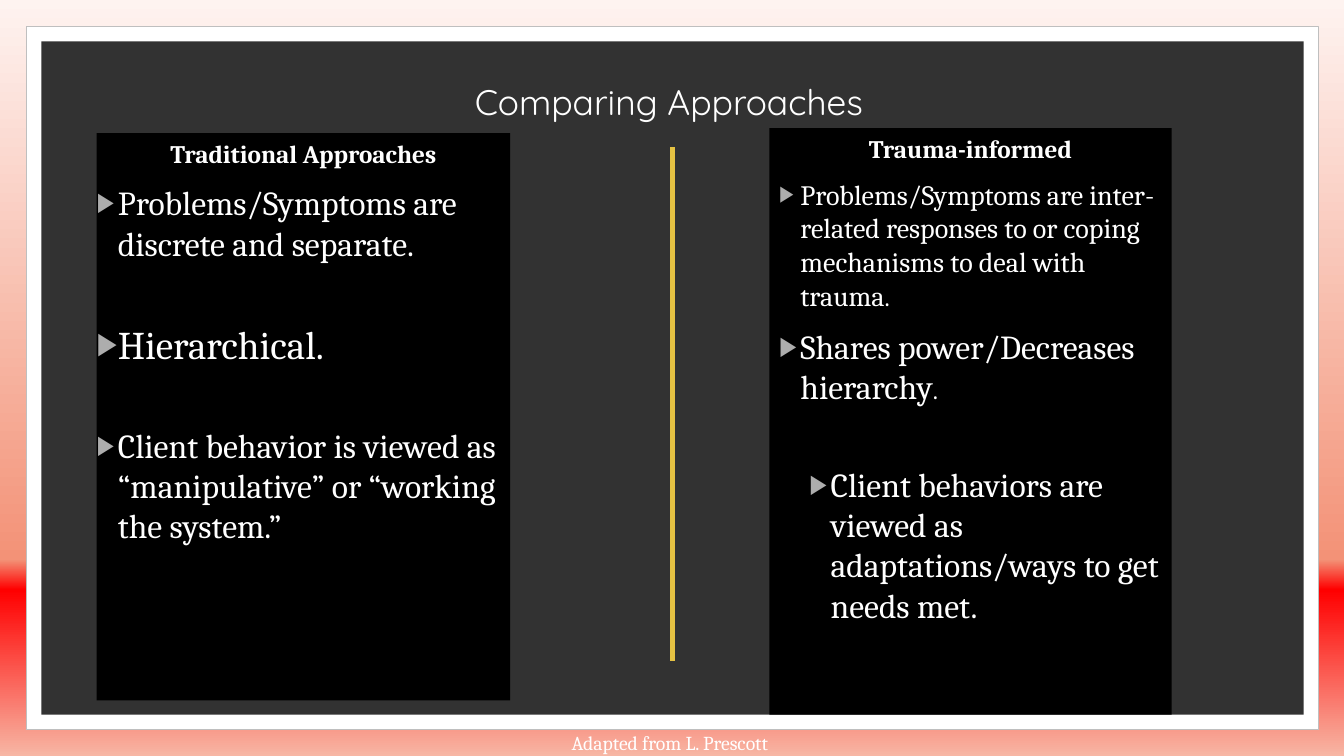
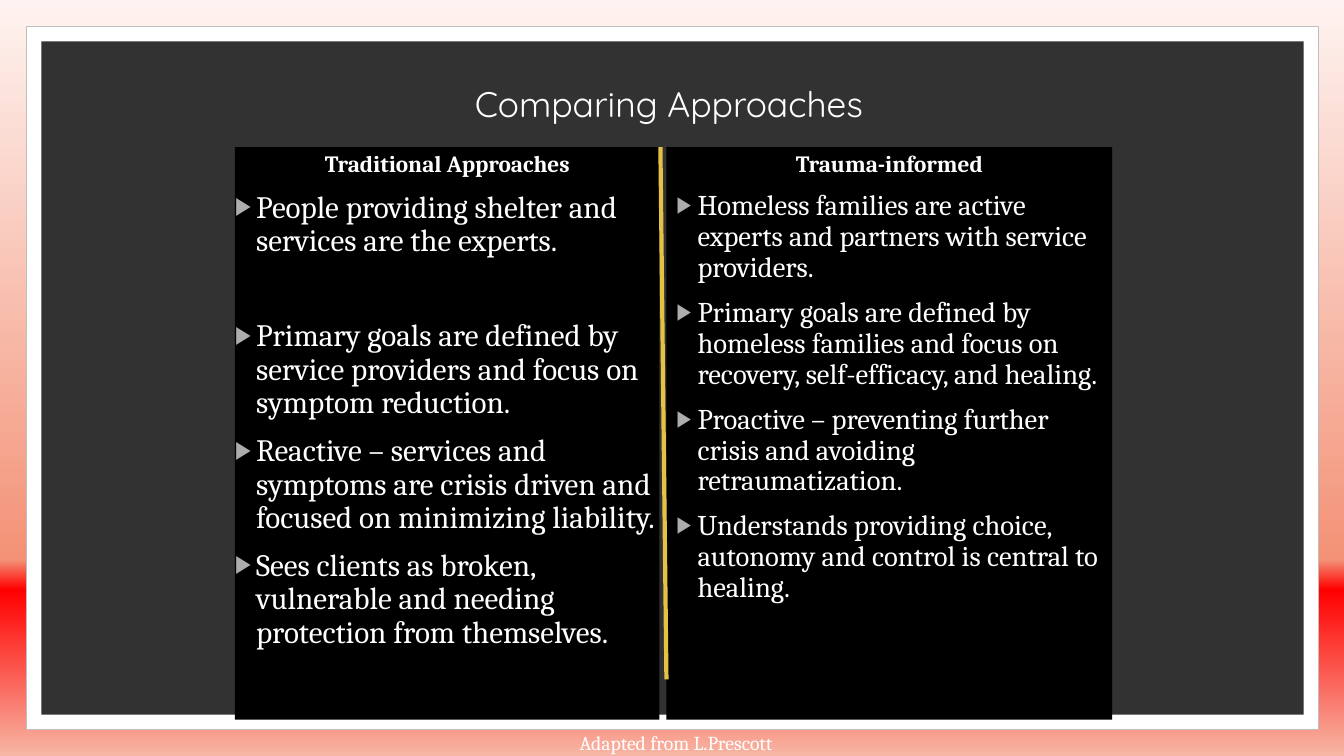
import copy
import pptx
import pptx.util
import pptx.dml.color
import pptx.enum.shapes
import pptx.enum.text
import pptx.oxml
import pptx.oxml.ns

Inches, Pt = pptx.util.Inches, pptx.util.Pt
ALIGN = pptx.enum.text.PP_ALIGN
qn = pptx.oxml.ns.qn

# Shared style
BODY, HEAD = "Cambria", "Quicksand"
WHITE, BLACK, SLATE, EDGE = "FFFFFF", "000000", "323232", "BFBFBF"
GOLD, GREY = "E5C243", "ADADAD"
SKY = [(0, "FEF3F0"), (0.74, "F39277"), (0.78, "FF0000"), (1, "F7B6A4")]
FRAMES = [((0.26, 0.26, 12.82, 6.98), WHITE, EDGE),
          ((0.41, 0.41, 12.52, 6.68), SLATE, None)]
HANG, GAP = 0.21, 10

# Content: each point is (runs of (text, size), space before, left indent)
SLIDES = [
    {"title": "Comparing Approaches", "tall": 0.43, "lead": 1.0, "size": 18,
     "panels": [
         {"at": (7.63, 1.27, 3.99, 5.82), "side": 0.1, "head": "Trauma-informed",
          "points": [
              ([("Problems/Symptoms are inter-related responses to or coping "
                 "mechanisms to deal with trauma", 20), (".", 18)], GAP, HANG),
              ([("Shares power/Decreases hierarchy", 24), (".", 18)], GAP, HANG),
              ([("Client behaviors are viewed as adaptations/ways to get "
                 "needs met.", 24)], 41, 0.51)]},
         {"at": (0.96, 1.32, 4.1, 5.63), "side": 0, "head": "Traditional Approaches",
          "points": [
              ([("Problems/Symptoms are discrete and separate.", 24)], GAP, HANG),
              ([("Hierarchical.", 28)], 41, HANG),
              ([("Client behavior is viewed as “manipulative” or “working "
                 "the system.”", 24)], 41, HANG)]}],
     "credit": ("Adapted from L. Prescott", 5.57),
     "rule": (6.67, 1.46, 6.67, 6.56)},
    {"title": "Comparing Approaches", "tall": 0.47, "lead": 0.9, "size": 16.6,
     "panels": [
         {"at": (6.61, 1.46, 4.42, 5.68), "side": 0.1, "head": "Trauma-informed",
          "points": [([(text, 20.4)], GAP, HANG) for text in (
              "Homeless families are active experts and partners with service "
              "providers.",
              "Primary goals are defined by homeless families and focus on "
              "recovery, self-efficacy, and healing.",
              "Proactive – preventing further crisis and avoiding "
              "retraumatization.",
              "Understands providing choice, autonomy and control is central "
              "to healing.")]},
         {"at": (2.33, 1.46, 4.21, 5.68), "side": 0, "head": "Traditional Approaches",
          "points": [([(text, 22.2)], gap, HANG) for text, gap in (
              ("People providing shelter and services are the experts.", GAP),
              ("Primary goals are defined by service providers and focus on "
               "symptom reduction.", 44),
              ("Reactive – services and symptoms are crisis driven and focused "
               "on minimizing liability.", GAP),
              ("Sees clients as broken, vulnerable and needing protection from "
               "themselves.", GAP))]}],
     "credit": ("Adapted from L.Prescott", 5.65),
     "rule": (6.55, 1.46, 6.61, 6.74)},
]


def rgb(code):
    return pptx.dml.color.RGBColor.from_string(code)


def place(box):
    return [Inches(v) for v in box]


def paint(fill, code):
    fill.solid()
    fill.fore_color.rgb = rgb(code)


def add_run(para, text, size, font=BODY, bold=False):
    run = para.add_run()
    run.text = text
    run.font.size, run.font.name, run.font.bold = Pt(size), font, bold
    run.font.color.rgb = rgb(WHITE)


def add_bullet(para, left):
    props = para._p.get_or_add_pPr()
    props.set("marL", str(Inches(left)))
    props.set("indent", str(-Inches(HANG)))
    color = pptx.oxml.ns.nsdecls("a")
    for xml in (f'<a:buClr {color}><a:srgbClr val="{GREY}"/></a:buClr>',
                f'<a:buSzPct {color} val="80000"/>',
                f'<a:buFont {color} typeface="Arial"/>',
                f'<a:buChar {color} char="▶"/>'):
        props.append(pptx.oxml.parse_xml(xml))


def set_back(layout):
    fill = layout.background.fill
    fill.gradient()
    fill.gradient_angle = 270
    stops = next(layout.element.iter(qn("a:gsLst")))
    while len(stops) < len(SKY):
        stops.append(copy.deepcopy(stops[0]))
    for stop, (pos, code) in zip(fill.gradient_stops, SKY):
        stop.position = pos
        stop.color.rgb = rgb(code)


def add_frames(slide, layout):
    """Draw the frames, then hand them to the layout all slides share."""
    for spot, (box, color, edge) in enumerate(FRAMES, 2):
        frame = slide.shapes.add_shape(
            pptx.enum.shapes.MSO_SHAPE.RECTANGLE, *place(box))
        frame.shadow.inherit = False
        paint(frame.fill, color)
        if edge:
            frame.line.color.rgb = rgb(edge)
            frame.line.width = Pt(0.5)
        else:
            frame.line.fill.background()
        layout.shapes.element.insert(spot, frame.element)


def add_title(slide, text, tall):
    title = slide.shapes.title
    title.left, title.top, title.width, title.height = place((2.27, 0.82, 8.73, tall))
    title.text_frame.vertical_anchor = pptx.enum.text.MSO_ANCHOR.MIDDLE
    para = title.text_frame.paragraphs[0]
    para.alignment, para.line_spacing = ALIGN.CENTER, 0.9
    add_run(para, text, 25.3, HEAD)


def add_panel(slide, panel, lead, size):
    box = slide.shapes.add_textbox(*place(panel["at"]))
    paint(box.fill, BLACK)
    frame = box.text_frame
    frame.word_wrap = True
    frame.margin_left = frame.margin_right = Inches(panel["side"])
    para = frame.paragraphs[0]
    para.alignment, para.line_spacing = ALIGN.CENTER, lead
    add_run(para, panel["head"], size, bold=True)
    for runs, gap, left in panel["points"]:
        para = frame.add_paragraph()
        add_bullet(para, left)
        para.space_before, para.line_spacing = Pt(gap), lead
        for text, points in runs:
            add_run(para, text, points)


def add_credit(slide, text, left):
    box = slide.shapes.add_textbox(*place((left, 7.2, 2.68, 0.34)))
    box.text_frame.word_wrap = True
    add_run(box.text_frame.paragraphs[0], text, 14.1)


def add_rule(slide, ends):
    rule = slide.shapes.add_connector(
        pptx.enum.shapes.MSO_CONNECTOR.STRAIGHT, *place(ends))
    rule.line.color.rgb = rgb(GOLD)
    rule.line.width = Pt(3)
    rule.element.spPr.append(pptx.oxml.parse_xml(
        f'<a:effectLst {pptx.oxml.ns.nsdecls("a")}/>'))


def main():
    prs = pptx.Presentation()
    prs.slide_width, prs.slide_height = Inches(13.33), Inches(7.5)
    layout = prs.slide_layouts[5]
    set_back(layout)
    for num, data in enumerate(SLIDES):
        slide = prs.slides.add_slide(layout)
        if num == 0:
            add_frames(slide, layout)
        add_title(slide, data["title"], data["tall"])
        for panel in data["panels"]:
            add_panel(slide, panel, data["lead"], data["size"])
        add_credit(slide, *data["credit"])
        add_rule(slide, data["rule"])
    prs.save("out.pptx")


if __name__ == "__main__":
    main()
